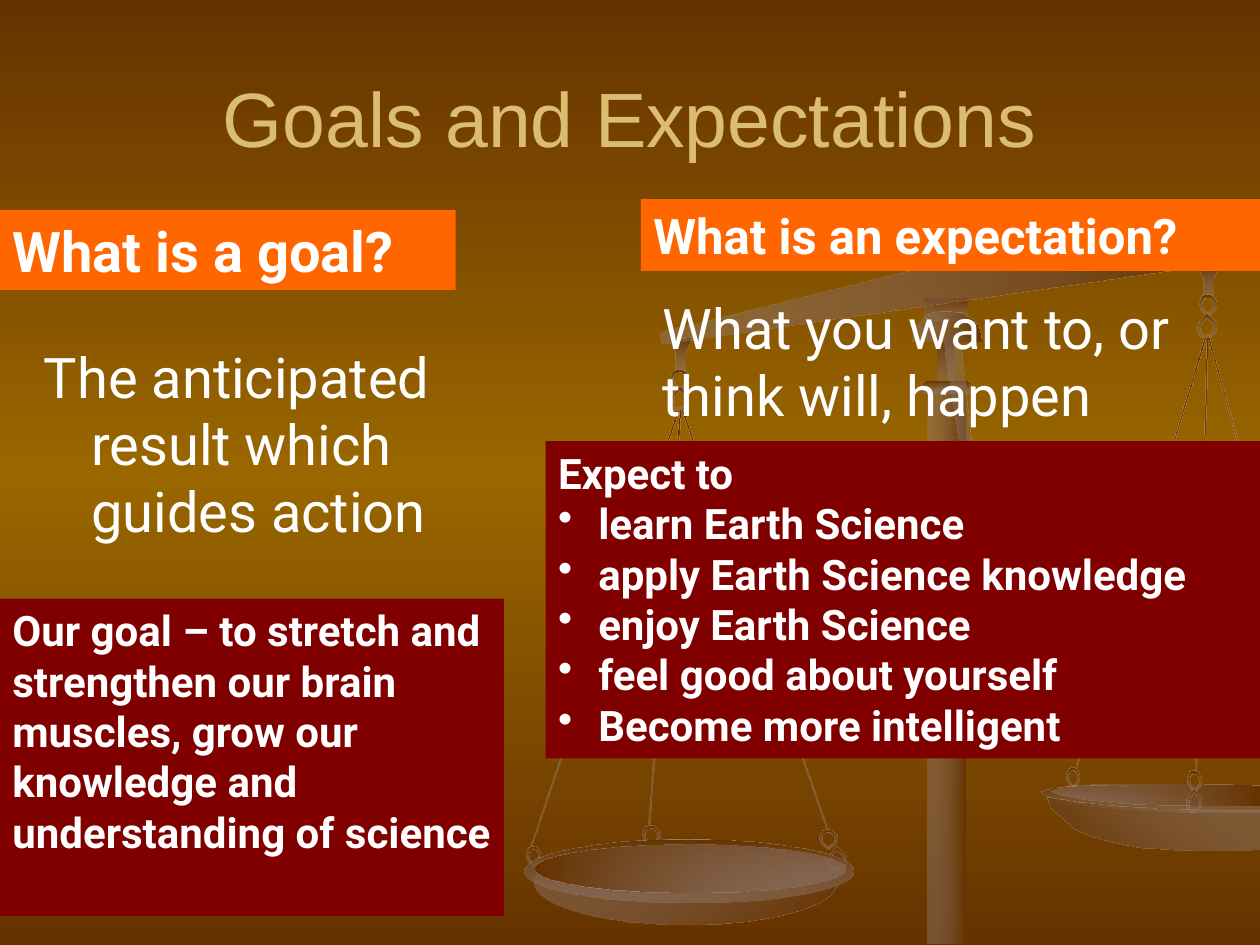
import copy

import pptx
import pptx.dml.color
import pptx.enum.shapes
import pptx.enum.text
import pptx.oxml
import pptx.oxml.ns
import pptx.util

Pt = pptx.util.Pt
RGBColor = pptx.dml.color.RGBColor
MSO_SHAPE = pptx.enum.shapes.MSO_SHAPE
PP_ALIGN = pptx.enum.text.PP_ALIGN
MSO_ANCHOR = pptx.enum.text.MSO_ANCHOR
qn = pptx.oxml.ns.qn

BROWN = RGBColor(0x66, 0x33, 0x00)
AMBER = RGBColor(0x99, 0x66, 0x00)
GREY = RGBColor(0x93, 0x7F, 0x79)
GOLD = RGBColor(0xDB, 0xBD, 0x71)
WHITE = RGBColor(0xFF, 0xFF, 0xFF)
MAROON = RGBColor(0x80, 0x00, 0x00)
ORANGE = RGBColor(0xFF, 0x66, 0x00)
GREY_ALPHA = 40000

prs = pptx.Presentation()
prs.slide_width, prs.slide_height = Pt(720), Pt(540)
slide = prs.slides.add_slide(prs.slide_layouts[6])
shapes = slide.shapes


def add_text(text, box, size, font="Roboto", color=WHITE, bold=False, fill=None,
             align=PP_ALIGN.LEFT, anchor=MSO_ANCHOR.TOP, hanging=0, bullets=False):
    """Each line of text is a paragraph; bullets start at the second one."""
    box = [Pt(v) for v in box]
    if fill is None:
        sp = shapes.add_textbox(*box)
    else:
        sp = shapes.add_shape(MSO_SHAPE.RECTANGLE, *box)
        sp.shadow.inherit = False
        sp.fill.solid()
        sp.fill.fore_color.rgb = fill
        sp.line.fill.background()
    tf = sp.text_frame
    tf.word_wrap = True
    tf.vertical_anchor = anchor
    for i, line in enumerate(text.split("\n")):
        p = tf.add_paragraph() if i else tf.paragraphs[0]
        p.text = line
        p.alignment = align
        for r in p.runs:
            r.font.name, r.font.size = font, Pt(size)
            r.font.bold, r.font.color.rgb = bold, color
        if hanging and (i or not bullets):
            pPr = p._p.get_or_add_pPr()
            pPr.set("marL", str(Pt(hanging)))
            pPr.set("indent", str(-Pt(hanging)))
            if bullets:
                bullet = pptx.oxml.parse_xml(
                    '<a:buChar xmlns:a="http://schemas.openxmlformats.org/'
                    'drawingml/2006/main" char="•"/>')
                pPr.append(bullet)


def add_outline(contours, box):
    """Draw closed contours, given in percent of the box."""
    x, y, w, h = box
    scaled = [[(Pt(x + w * px / 100), Pt(y + h * py / 100)) for px, py in c]
              for c in contours]
    builder = shapes.build_freeform(*scaled[0][0])
    builder.add_line_segments(scaled[0][1:], close=True)
    for contour in scaled[1:]:
        builder.move_to(*contour[0])
        builder.add_line_segments(contour[1:], close=True)
    return builder.convert_to_shape()


# Background: brown, amber in the middle, brown
fill = slide.background.fill
fill.gradient()
fill.gradient_angle = 270
stops = fill.gradient_stops
first = slide._element.find(".//" + qn("a:gs"))
first.addnext(copy.deepcopy(first))
for stop, color, pos in zip(fill.gradient_stops, (BROWN, AMBER, BROWN), (0, 0.5, 1)):
    stop.color.rgb, stop.position = color, pos

# Outlines of the balance, in percent of their boxes
drop = [(50, 100), (81, 76), (100, 53), (95, 29), (72, 6), (45, 0), (20, 6),
        (5, 35), (12, 65)]
hole = [(50 + 0.7 * (x - 50), 45 + 0.7 * (y - 45)) for x, y in drop]
LINK_DOWN = [drop, hole]
LINK_UP = [[(x, 100 - y) for x, y in c] for c in LINK_DOWN]
HOOK = [[(100, 0), (0, 7), (28, 45), (28, 98), (72, 100), (72, 44)]]
BEAM = [[(99.3, 0), (100, 16), (0.2, 100), (0, 88), (47, 21), (52, 17)]]
RIM = [[(76, 5), (40, 5), (22, 0), (11, 5), (5, 9), (0, 23), (3, 45), (9, 59),
        (21, 73), (39, 86), (62, 95), (76, 100), (100, 100), (100, 14)]]
BOWL = [[(0, 0), (2, 21), (7, 37), (12, 56), (20, 70), (30, 81), (43, 91), (57, 95),
         (75, 98), (88, 98), (100, 95), (100, 23), (72, 23), (51, 21), (33, 16), (15, 9)]]
INSIDE = [[(73, 0), (21, 0), (10, 6), (3, 19), (0, 31), (5, 50), (17, 69), (36, 88),
           (60, 97), (87, 100), (100, 100), (100, 6)]]
ARM = [[(98, 100), (5, 5), (5, 4), (0, 1), (27, 0), (30, 3), (34, 4)]]
YOKE = [[(51, 0), (71, 4), (87, 25), (96, 54), (100, 100), (0, 100), (4, 54),
         (15, 25), (29, 4)]]
RECT, OVAL, ROUND = MSO_SHAPE.RECTANGLE, MSO_SHAPE.OVAL, MSO_SHAPE.ROUNDED_RECTANGLE
DARK_FIRST, LIGHT_FIRST = (BROWN, GREY), (GREY, BROWN)

# Balance, back to front: form, box, rotation, colours, gradient angle (clockwise)
balance = [
    (RECT, (528.5, 170.6, 24.5, 13), 0, DARK_FIRST, 90),
    (OVAL, (537.1, 148.3, 5.8, 5.8), 0, DARK_FIRST, 90),
    (RECT, (650.9, 187.2, 0.72, 259.2), 16.6, DARK_FIRST, 90),
    (LINK_DOWN, (609.1, 438.5, 7.9, 12.2), 0, DARK_FIRST, 90),
    (RECT, (686.2, 191.5, 0.72, 249.8), 1.5, DARK_FIRST, 90),
    (RECT, (704.9, 190.1, 0.72, 110.2), 344.6, DARK_FIRST, 90),
    (RECT, (430.6, 226.8, 0.72, 254.2), 341, DARK_FIRST, 90),
    (RECT, (344.9, 227.5, 0.72, 265), 18.6, DARK_FIRST, 90),
    (RECT, (379.4, 234, 0.72, 238.3), 4.2, DARK_FIRST, 90),
    (RIM, (595.4, 448.6, 124.6, 15.8), 0, DARK_FIRST, 90),
    (BOWL, (598.3, 455.8, 121.7, 31), 0, DARK_FIRST, 315),
    (INSIDE, (600.5, 448.6, 119.5, 11.5), 0, LIGHT_FIRST, 0),
    (HOOK, (382.3, 193, 13, 19.4), 0, DARK_FIRST, 90),
    (LINK_DOWN, (382.3, 211, 11.5, 12.2), 0, DARK_FIRST, 90),
    (LINK_UP, (382.3, 221, 11.5, 13.7), 0, DARK_FIRST, 90),
    (HOOK, (684, 150.5, 13, 19.4), 0, DARK_FIRST, 90),
    (LINK_DOWN, (684.7, 168.5, 10.4, 12.2), 0, DARK_FIRST, 90),
    (LINK_UP, (684, 179.3, 11.2, 13.7), 0, DARK_FIRST, 90),
    (LINK_DOWN, (678.2, 440.6, 8.3, 12.2), 0, DARK_FIRST, 90),
    (BEAM, (377.3, 141.1, 325.4, 55.4), 0, LIGHT_FIRST, 0),
    (LINK_DOWN, (366.5, 471.6, 10.8, 12), 0, DARK_FIRST, 90),
    (LINK_UP, (472.3, 483.8, 11.5, 13.7), 0, DARK_FIRST, 90),
    (LINK_DOWN, (300.2, 483.8, 8.6, 11.5), 0, DARK_FIRST, 90),
    (OVAL, (305.3, 479.5, 172.8, 49), 0, LIGHT_FIRST, 45),
    (OVAL, (299.5, 479.5, 187.9, 36), 0, DARK_FIRST, 90),
    (OVAL, (305.3, 482.4, 177.8, 27.4), 0, DARK_FIRST, 0),
    (LINK_DOWN, (468, 473.8, 10.8, 11.5), 0, DARK_FIRST, 90),
    (LINK_UP, (677.5, 450.7, 9, 13.3), 0, DARK_FIRST, 90),
    (RECT, (529.9, 221.8, 21.6, 317.5), 0, LIGHT_FIRST, 0),
    (RECT, (535.7, 193, 9.4, 30.2), 0, DARK_FIRST, 90),
    (ROUND, (527.8, 218.2, 25.9, 6.5), 0, DARK_FIRST, 90),
    (ARM, (538.6, 190.8, 31.7, 197.3), 0, LIGHT_FIRST, 45),
    (YOKE, (521.3, 177.8, 39.6, 17.3), 0, LIGHT_FIRST, 0),
]
for form, box, rotation, colors, angle in balance:
    if isinstance(form, list):
        sp = add_outline(form, box)
    else:
        sp = shapes.add_shape(form, *[Pt(v) for v in box])
    sp.rotation = rotation
    sp.shadow.inherit = False
    sp.line.fill.background()
    sp.fill.gradient()
    sp.fill.gradient_angle = (360 - angle) % 360
    for stop, color, pos in zip(sp.fill.gradient_stops, colors, (0, 1)):
        stop.color.rgb, stop.position = color, pos
    for clr in sp._element.spPr.iter(qn("a:srgbClr")):
        if clr.get("val") == str(GREY):
            alpha = clr.makeelement(qn("a:alpha"), {"val": str(GREY_ALPHA)})
            clr.append(alpha)

add_text("Goals and Expectations", (36, 21.6, 648, 90), 44, font="Arial", color=GOLD,
         align=PP_ALIGN.CENTER, anchor=MSO_ANCHOR.MIDDLE)
add_text("The anticipated result which guides action", (18, 192.2, 240, 156), 32,
         hanging=27)
add_text("What you want to, or \vthink will, happen", (371.5, 164.2, 326.2, 84.2), 32)
add_text("Our goal – to stretch and strengthen our brain muscles, grow our knowledge "
         "and understanding of science", (0, 342, 288, 181.4), 24, bold=True, fill=MAROON)
add_text("Expect to\nlearn Earth Science\napply Earth Science knowledge\n"
         "enjoy Earth Science\nfeel good about yourself\nBecome more intelligent",
         (311.8, 252, 411.8, 181.4), 24, bold=True, fill=MAROON, hanging=23, bullets=True)
add_text("What is a goal?", (0, 120, 260.4, 45.6), 32, bold=True, fill=ORANGE)
add_text("What is an expectation?", (366.3, 113.8, 353.7, 41), 28, bold=True, fill=ORANGE)

prs.save("out.pptx")
